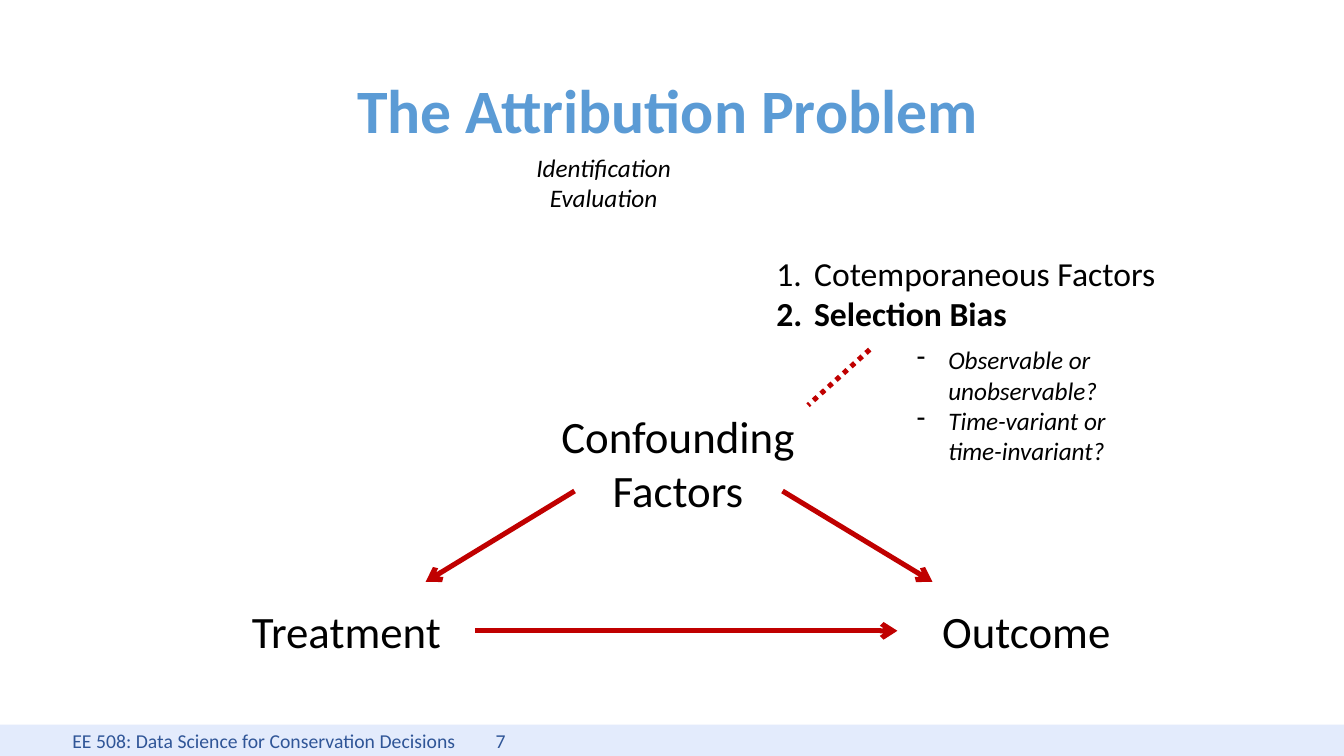
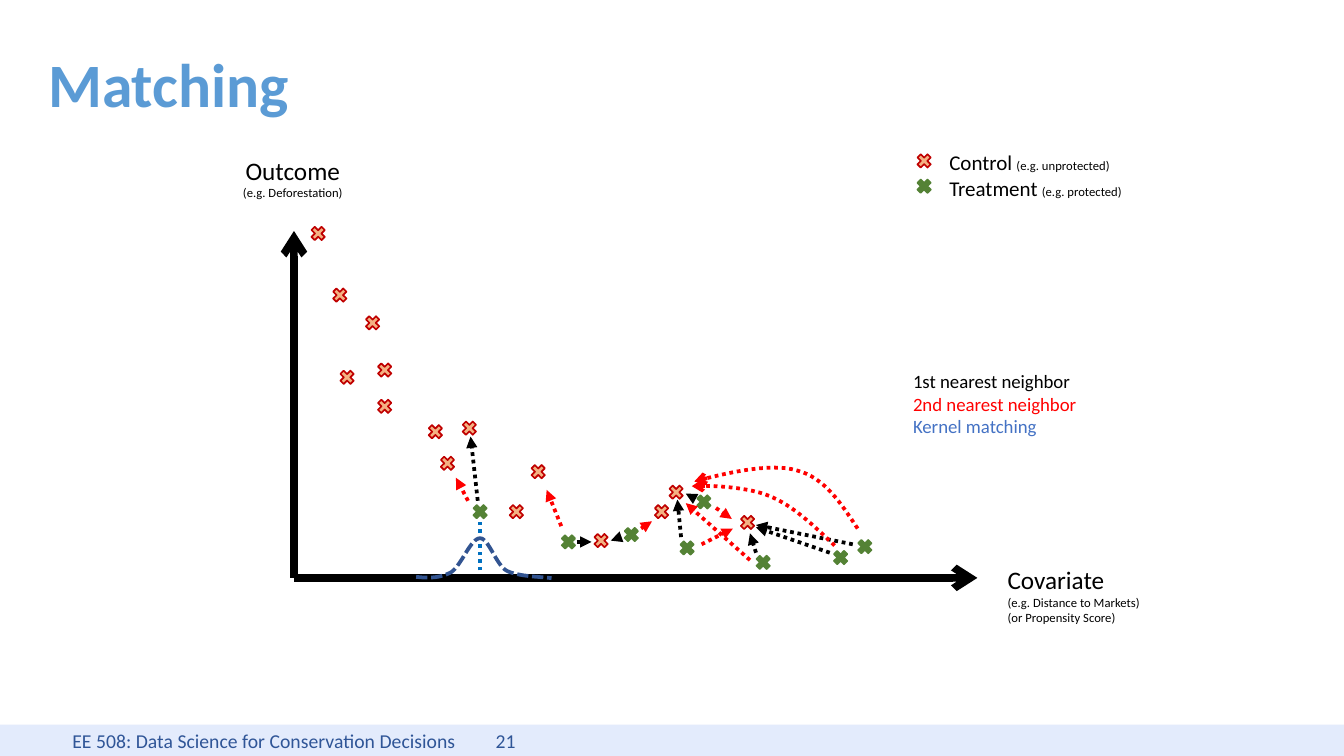
from dataclasses import dataclass, field
from typing import Any, NamedTuple

from pptx import Presentation
from pptx.dml.color import RGBColor
from pptx.enum.dml import MSO_LINE as Dash
from pptx.enum.shapes import MSO_CONNECTOR as Connector, MSO_SHAPE as Preset
from pptx.enum.text import MSO_ANCHOR as Anchor, PP_ALIGN as Align
from pptx.oxml.ns import qn
from pptx.oxml.xmlchemy import OxmlElement
from pptx.util import Pt

WIDTH, HEIGHT = 800, 450
FONT = "Calibri"
COURSE = "EE 508: Data Science for Conservation Decisions"
COLORS = {
    "title": "5B9BD5", "band": "E3EBFC", "footer": "2F5597", "text": "000000",
    "arrow": "C00000", "control": "F4B183", "control_edge": "C00000",
    "treatment": "548235", "first": "000000", "second": "FF0000",
    "kernel": "4472C4", "kernel_drop": "0070C0", "kernel_bell": "325491",
}
MARKER_SIZE = 11.5
BEZIER_STEPS = 16

Point = tuple[float, float]


class Box(NamedTuple):
    left: float
    top: float
    width: float
    height: float

    def pts(self) -> list[Pt]:
        return [Pt(length) for length in self]


@dataclass
class Run:
    text: str
    size: float
    color: str = "text"
    style: dict[str, Any] = field(default_factory=dict)


@dataclass
class Para:
    runs: list[Run]
    style: dict[str, Any] = field(default_factory=dict)
    bullet: str = ""
    indent: float = 0


@dataclass
class Stroke:
    color: str
    width: float
    dash: Any = None
    head: str = ""


@dataclass
class Arrow:
    start: Point
    end: Point


CENTERED = {"alignment": Align.CENTER}
BOLD, ITALIC = {"bold": True}, {"italic": True}


def rgb(name: str) -> RGBColor:
    return RGBColor.from_string(COLORS[name])


def apply(target: Any, formats: dict[str, Any]) -> None:
    for attribute, value in formats.items():
        setattr(target, attribute, value)


def add_child(parent: Any, tag: str, **attributes: str) -> Any:
    child = OxmlElement(tag)
    for key, value in attributes.items():
        child.set(key, value)
    parent.append(child)
    return child


def write_run(paragraph: Any, run: Run) -> None:
    for number, line in enumerate(run.text.split("\n")):
        if number:
            paragraph.add_line_break()
        piece = paragraph.add_run()
        piece.text = line
        apply(piece.font, {"name": FONT, "size": Pt(run.size), **run.style})
        piece.font.color.rgb = rgb(run.color)


def write_text(frame: Any, paras: list[Para], anchor: Any = Anchor.TOP) -> None:
    apply(frame, {"word_wrap": True, "vertical_anchor": anchor})
    for number, para in enumerate(paras):
        paragraph = frame.add_paragraph() if number else frame.paragraphs[0]
        apply(paragraph, para.style)
        if para.bullet:
            props = paragraph._p.get_or_add_pPr()
            props.set("marL", str(Pt(para.indent)))
            props.set("indent", str(-Pt(para.indent)))
            if para.bullet == "1.":
                add_child(props, "a:buAutoNum", type="arabicPeriod")
            else:
                add_child(props, "a:buChar", char=para.bullet)
        for run in para.runs:
            write_run(paragraph, run)


def add_text(slide: Any, box: Box, paras: list[Para], anchor: Any = Anchor.TOP) -> Any:
    label = slide.shapes.add_textbox(*box.pts())
    write_text(label.text_frame, paras, anchor)
    return label


def add_title(slide: Any, box: Box, text: str, align: Any = Align.LEFT) -> None:
    style = {"alignment": align, "line_spacing": 0.9}
    add_text(slide, box, [Para([Run(text, 36.7, "title", BOLD)], style)], Anchor.MIDDLE)


def add_footer(slide: Any, number: int) -> None:
    band = slide.shapes.add_shape(Preset.RECTANGLE, *Box(0, 431.3, WIDTH, 18.7).pts())
    band.shadow.inherit = False
    band.fill.solid()
    band.fill.fore_color.rgb = rgb("band")
    band.line.fill.background()
    paragraph = band.text_frame.paragraphs[0]
    paragraph.alignment = Align.LEFT
    tabs = add_child(paragraph._p.get_or_add_pPr(), "a:tabLst")
    for stop in (36, 288):
        add_child(tabs, "a:tab", pos=str(Pt(stop)), algn="l")
    write_text(band.text_frame, [Para([Run(f"\t{COURSE}\t{number}", 11.7, "footer")])],
               Anchor.MIDDLE)


def apply_stroke(shape: Any, stroke: Stroke) -> None:
    shape.line.color.rgb = rgb(stroke.color)
    shape.line.width = Pt(stroke.width)
    if stroke.dash:
        shape.line.dash_style = stroke.dash
    if stroke.head:
        add_child(shape.element.spPr.find(qn("a:ln")), "a:tailEnd", type=stroke.head)


def add_line(slide: Any, arrow: Arrow, stroke: Stroke) -> Any:
    ends = [Pt(length) for length in (*arrow.start, *arrow.end)]
    line = slide.shapes.add_connector(Connector.STRAIGHT, *ends)
    apply_stroke(line, stroke)
    add_child(line.element.spPr, "a:effectLst")
    return line


def bezier(p0: Point, p1: Point, p2: Point, p3: Point) -> list[Point]:
    """Points along a cubic curve, without its start."""
    points = []
    for step in range(1, BEZIER_STEPS + 1):
        t = step / BEZIER_STEPS
        u = 1 - t
        weights = (u**3, 3 * u * u * t, 3 * u * t * t, t**3)
        x, y = (sum(w * p[axis] for w, p in zip(weights, (p0, p1, p2, p3)))
                for axis in (0, 1))
        points.append((x, y))
    return points


def add_curve(slide: Any, knots: list[Point], stroke: Stroke) -> None:
    """Draws a start point followed by groups of two controls and an end."""
    builder = slide.shapes.build_freeform(Pt(knots[0][0]), Pt(knots[0][1]))
    for first in range(0, len(knots) - 1, 3):
        points = bezier(*knots[first:first + 4])
        builder.add_line_segments([(Pt(x), Pt(y)) for x, y in points], close=False)
    curve = builder.convert_to_shape()
    curve.shadow.inherit = False
    curve.fill.background()
    apply_stroke(curve, stroke)


def add_marker(slide: Any, center: Point, fill: str, edge: str) -> None:
    half = MARKER_SIZE / 2
    box = Box(center[0] - half, center[1] - half, MARKER_SIZE, MARKER_SIZE)
    marker = slide.shapes.add_shape(Preset.MATH_MULTIPLY, *box.pts())
    marker.shadow.inherit = False
    marker.fill.solid()
    marker.fill.fore_color.rgb = rgb(fill)
    apply_stroke(marker, Stroke(edge, 1))


def build_attribution(slide: Any) -> None:
    add_footer(slide, 7)
    add_title(slide, Box(52.5, 23.8, 690, 87), "The Attribution Problem", Align.CENTER)
    add_text(slide, Box(276.5, 87.1, 165.6, 44),
             [Para([Run(text, 15, style=ITALIC)], CENTERED)
              for text in ("Identification", "Evaluation")])
    add_text(slide, Box(455, 146.9, 250, 55.4),
             [Para([Run(text, 20, style=style)], bullet="1.", indent=22.5)
              for text, style in (("Cotemporaneous Factors", {}), ("Selection Bias", BOLD))])
    add_text(slide, Box(538.6, 201.6, 137.5, 80),
             [Para([Run(text, 15, style=ITALIC)], bullet="-", indent=18.75)
              for text in ("Observable or unobservable?",
                           "Time-variant or \ntime-invariant?")])

    treatment, outcome, _ = [
        add_text(slide, Box(left, top, 153.4, height), [Para([Run(text, 26.7)], CENTERED)])
        for text, left, top, height in (("Treatment", 129.6, 355.7, 39.6),
                                        ("Outcome", 534.2, 355.7, 39.6),
                                        ("Confounding Factors", 326.9, 239.8, 72))]
    causal = Stroke("arrow", 3, head="arrow")
    for arrow in (Arrow((342, 292.3), (253.4, 346.3)), Arrow((465.8, 292.3), (555, 346.3))):
        add_line(slide, arrow, causal)
    effect = add_line(slide, Arrow((283, 375.5), (534.2, 375.5)), causal)
    effect.begin_connect(treatment, 3)
    effect.end_connect(outcome, 1)
    add_line(slide, Arrow((517.7, 208.1), (481, 241.2)), Stroke("arrow", 3, Dash.ROUND_DOT))


CONTROL_POINTS = [
    (189.4, 139), (202.3, 175.7), (221.8, 192.2), (206.6, 224.6), (229, 220.3),
    (229, 241.9), (259.2, 257), (279.4, 254.9), (266.4, 275.8), (307.4, 304.6),
    (320.4, 280.8), (357.8, 321.8), (393.8, 304.6), (402.5, 293), (445, 311),
]
TREATMENT_POINTS = [
    (285.8, 304.6), (338.4, 322.6), (375.8, 318.2), (409, 326.2), (419, 298.8),
    (454.3, 334.8), (500.4, 331.9), (514.8, 325.4),
]
FIRST_NEIGHBORS = [
    Arrow((507.6, 324), (450, 312.5)), Arrow((493.9, 329), (450, 313.9)),
    Arrow((450, 329), (446.4, 317.5)), Arrow((413.3, 296.6), (408.2, 293.8)),
    Arrow((405.4, 319.7), (403.2, 297.4)), Arrow((369.4, 319.7), (363.6, 321.8)),
    Arrow((343.4, 322.6), (352.1, 322.6)), Arrow((284.4, 298.1), (280.1, 259.9)),
]
SECOND_NEIGHBORS = [
    Arrow((446.4, 333.4), (408.2, 299.5)), Arrow((426.2, 302.4), (435.6, 308.9)),
    Arrow((381.6, 314.6), (388.1, 310.3)), Arrow((334.1, 313.2), (325.4, 291.6)),
    Arrow((278.6, 298.1), (271.4, 284.4)), Arrow((417.6, 324), (436.3, 314.6)),
]
SECOND_CURVES = [
    [(496.8, 324.7), (484.6, 313.2), (472.3, 301), (457.9, 295.2),
     (444.2, 289.4), (419, 288.7), (411.8, 289.4)],
    [(510.5, 314.6), (500.4, 299.5), (491, 284.4), (474.5, 280.1),
     (458.6, 275), (429.8, 282.2), (413.3, 286.6)],
]
KERNEL_BELL = [
    (247.7, 343.4), (254.9, 344.2), (262.1, 344.2), (268.6, 340.6),
    (275, 336.2), (280.1, 320.4), (285.8, 320.4), (290.9, 320.4), (295.2, 336.2),
    (301.7, 339.8), (308.9, 343.4), (324, 343.4), (328.3, 344.2),
]


def build_matching(slide: Any) -> None:
    add_footer(slide, 21)
    add_title(slide, Box(21.6, 20.9, 762.5, 62.6), "Matching")
    add_line(slide, Arrow((285.8, 344), (285.8, 311)),
             Stroke("kernel_drop", 2.25, Dash.ROUND_DOT))
    for tip in ((175, 137.5), (581.8, 344)):
        add_line(slide, Arrow((175, 344), tip), Stroke("text", 4.5, head="arrow"))
    add_text(slide, Box(136.8, 88.6, 75, 34.6),
             [Para([Run("Outcome", 15)], CENTERED),
              Para([Run("(e.g. Deforestation)", 7.5)], CENTERED)])
    add_text(slide, Box(592.6, 332.6, 94.3, 44),
             [Para([Run("Covariate", 15)]), Para([Run("(e.g. Distance to Markets)", 7.5)]),
              Para([Run("(or Propensity Score)", 7.5)])])

    groups = (("Control", "(e.g. unprotected)", "control", "control_edge", CONTROL_POINTS),
              ("Treatment", "(e.g. protected)", "treatment", "treatment", TREATMENT_POINTS))
    for row, (name, example, fill, edge, centers) in enumerate(groups):
        drop = row * 15.1
        for center in [*centers, (550.1, 95.8 + drop)]:
            add_marker(slide, center, fill, edge)
        add_text(slide, Box(558, 85.7 + drop, 124.6, 22.3),
                 [Para([Run(name, 12.5), Run(" ", 11.2), Run(example, 7.5)])])

    for color, arrows in (("first", FIRST_NEIGHBORS), ("second", SECOND_NEIGHBORS)):
        for arrow in arrows:
            add_line(slide, arrow, Stroke(color, 2.25, Dash.ROUND_DOT, "triangle"))
    for knots in SECOND_CURVES:
        add_curve(slide, knots, Stroke("second", 2.25, Dash.ROUND_DOT, "arrow"))
    add_curve(slide, KERNEL_BELL, Stroke("kernel_bell", 2.25, Dash.SQUARE_DOT))
    add_text(slide, Box(536.4, 216.7, 122.4, 48.2),
             [Para([Run(text, 11.2, color)])
              for text, color in (("1st nearest neighbor", "first"),
                                  ("2nd nearest neighbor", "second"),
                                  ("Kernel matching", "kernel"))])


def main() -> None:
    deck = Presentation()
    apply(deck, {"slide_width": Pt(WIDTH), "slide_height": Pt(HEIGHT)})
    for build in (build_attribution, build_matching):
        build(deck.slides.add_slide(deck.slide_layouts[6]))
    deck.save("out.pptx")


if __name__ == "__main__":
    main()
